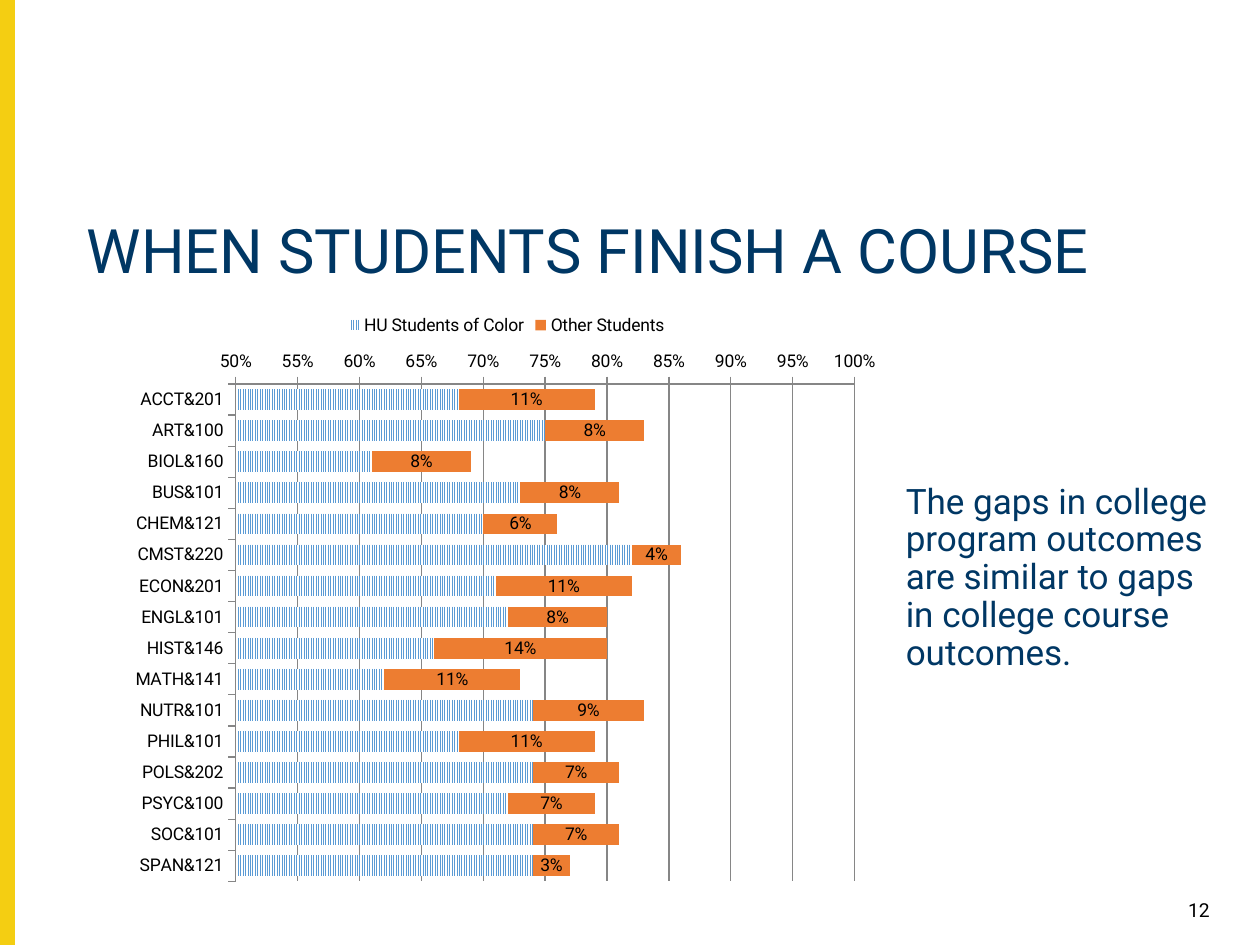
"""Build a slide on gaps in course outcomes."""
from dataclasses import dataclass

from pptx import Presentation
from pptx.chart.data import CategoryChartData
from pptx.dml.color import RGBColor
from pptx.enum.chart import (XL_CHART_TYPE, XL_LABEL_POSITION,
                             XL_LEGEND_POSITION, XL_TICK_MARK)
from pptx.enum.dml import MSO_PATTERN
from pptx.enum.shapes import MSO_SHAPE
from pptx.enum.text import MSO_ANCHOR, PP_ALIGN
from pptx.oxml import parse_xml
from pptx.oxml.ns import nsdecls, qn
from pptx.util import Inches, Pt

STACKED = XL_CHART_TYPE.BAR_STACKED
CENTER = XL_LABEL_POSITION.CENTER
TOP_KEY = XL_LEGEND_POSITION.TOP
OUT, NONE = XL_TICK_MARK.OUTSIDE, XL_TICK_MARK.NONE
STRIPES = MSO_PATTERN.NARROW_VERTICAL
RECT = MSO_SHAPE.RECTANGLE
TOP, MIDDLE = MSO_ANCHOR.TOP, MSO_ANCHOR.MIDDLE
LEFT, RIGHT = PP_ALIGN.LEFT, PP_ALIGN.RIGHT

COLOR = "HU Students of Color"
OTHER = "Other Students"
COURSES = {
    "ACCT&201": (0.68, 0.11), "ART&100": (0.75, 0.08),
    "BIOL&160": (0.61, 0.08), "BUS&101": (0.73, 0.08),
    "CHEM&121": (0.70, 0.06), "CMST&220": (0.82, 0.04),
    "ECON&201": (0.71, 0.11), "ENGL&101": (0.72, 0.08),
    "HIST&146": (0.66, 0.14), "MATH&141": (0.62, 0.11),
    "NUTR&101": (0.74, 0.09), "PHIL&101": (0.68, 0.11),
    "POLS&202": (0.74, 0.07), "PSYC&100": (0.72, 0.07),
    "SOC&101": (0.74, 0.07), "SPAN&121": (0.74, 0.03),
}


@dataclass(frozen=True)
class Theme:
    """Hold the colours, font and type sizes."""
    font: str = "Roboto"
    navy: RGBColor = RGBColor(0x00, 0x37, 0x64)
    gold: RGBColor = RGBColor(0xF4, 0xCE, 0x12)
    blue: RGBColor = RGBColor(0x5B, 0x9B, 0xD5)
    orange: RGBColor = RGBColor(0xED, 0x7D, 0x31)
    gray: RGBColor = RGBColor(0x86, 0x86, 0x86)
    black: RGBColor = RGBColor(0, 0, 0)
    white: RGBColor = RGBColor(255, 255, 255)
    title: int = 35
    body: int = 20
    page: int = 11
    chart: int = 10


def put_text(frame, text, *, font, size, color, align=LEFT, anchor=TOP,
             space=1.0):
    """Write one formatted paragraph into a text frame."""
    frame.word_wrap = True
    frame.vertical_anchor = anchor
    para = frame.paragraphs[0]
    para.alignment = align
    para.line_spacing = space
    run = para.add_run()
    run.text = text
    run.font.name = font
    run.font.size = Pt(size)
    run.font.color.rgb = color


class Painter:
    """Draw styled elements on the current slide."""

    def __init__(self, slide, theme):
        """Keep the slide and its theme."""
        self.slide = slide
        self.theme = theme

    def band(self, *box, color):
        """Add a solid rectangle."""
        shape = self.slide.shapes.add_shape(RECT, *map(Inches, box))
        shape.shadow.inherit = False
        shape.fill.solid()
        shape.fill.fore_color.rgb = color
        shape.line.color.rgb = color
        shape.line.width = Pt(1)

    def text(self, text, *box, **style):
        """Add a text box."""
        shape = self.slide.shapes.add_textbox(*map(Inches, box))
        put_text(shape.text_frame, text, font=self.theme.font, **style)

    def axis(self, axis):
        """Style the line and ticks of an axis."""
        axis.major_tick_mark = OUT
        axis.minor_tick_mark = NONE
        axis.format.line.color.rgb = self.theme.gray

    def layout(self, chart, **parts):
        """Fix the inner plot area as fractions of the chart."""
        area = chart.plots[0]._element.getparent()
        for old in area.findall(qn("c:layout")):
            area.remove(old)
        sizes = "".join(f'<c:{key} val="{val}"/>'
                        for key, val in parts.items())
        area.insert(0, parse_xml(
            f'<c:layout {nsdecls("c")}><c:manualLayout>'
            '<c:layoutTarget val="inner"/><c:xMode val="edge"/>'
            f'<c:yMode val="edge"/>{sizes}</c:manualLayout></c:layout>'))

    def chart(self, courses, *box):
        """Add the stacked bars of course outcomes."""
        theme = self.theme
        data = CategoryChartData(number_format="0%")
        data.categories = list(courses)
        for name, vals in zip((COLOR, OTHER), zip(*courses.values())):
            data.add_series(name, vals)
        chart = self.slide.shapes.add_chart(
            STACKED, *map(Inches, box), data).chart
        chart.font.name = theme.font
        chart.font.size = Pt(theme.chart)
        chart.font.color.rgb = theme.black
        chart.has_title = False
        chart.has_legend = True
        chart.legend.position = TOP_KEY
        chart.legend.include_in_layout = False

        cats, scale = chart.category_axis, chart.value_axis
        self.axis(cats)
        self.axis(scale)
        cats.reverse_order = True
        scale.minimum_scale, scale.maximum_scale = 0.5, 1
        scale.major_unit = 0.05
        scale.has_major_gridlines = True
        scale.major_gridlines.format.line.color.rgb = theme.gray
        scale.tick_labels.number_format = "0%"
        scale.tick_labels.number_format_is_linked = False

        plot = chart.plots[0]
        plot.gap_width, plot.overlap = 50, 100
        plot.vary_by_categories = False
        base, gap = plot.series
        base.invert_if_negative = gap.invert_if_negative = False
        fill = base.format.fill
        fill.patterned()
        fill.pattern = STRIPES
        fill.fore_color.rgb = theme.blue
        fill.back_color.rgb = theme.white
        gap.format.fill.solid()
        gap.format.fill.fore_color.rgb = theme.orange
        labels = gap.data_labels
        labels.show_value = True
        labels.number_format = "0%"
        labels.number_format_is_linked = False
        labels.position = CENTER
        self.layout(chart, x=0.15, y=0.14, w=0.8, h=0.84)


def main():
    """Build and save the slide."""
    deck = Presentation()
    deck.slide_width, deck.slide_height = Inches(10), Inches(7.5)
    theme = Theme()
    pen = Painter(deck.slides.add_slide(deck.slide_layouts[6]), theme)
    pen.band(0, 0, 0.11, 7.5, color=theme.gold)
    pen.text("WHEN STUDENTS FINISH A COURSE", 0.59, 1.7, 9.12, 0.87,
             size=theme.title, color=theme.navy, space=0.9)
    pen.text("12", 9.19, 7.09, 0.51, 0.26, size=theme.page,
             color=theme.black, align=RIGHT, anchor=MIDDLE)
    pen.chart(COURSES, 0.95, 2.39, 6.14, 4.7)
    pen.text("The gaps in college program outcomes are similar to gaps "
             "in college course outcomes.", 7.09, 3.79, 2.62, 1.91,
             size=theme.body, color=theme.navy, space=0.9)
    deck.save("out.pptx")


if __name__ == "__main__":
    main()
